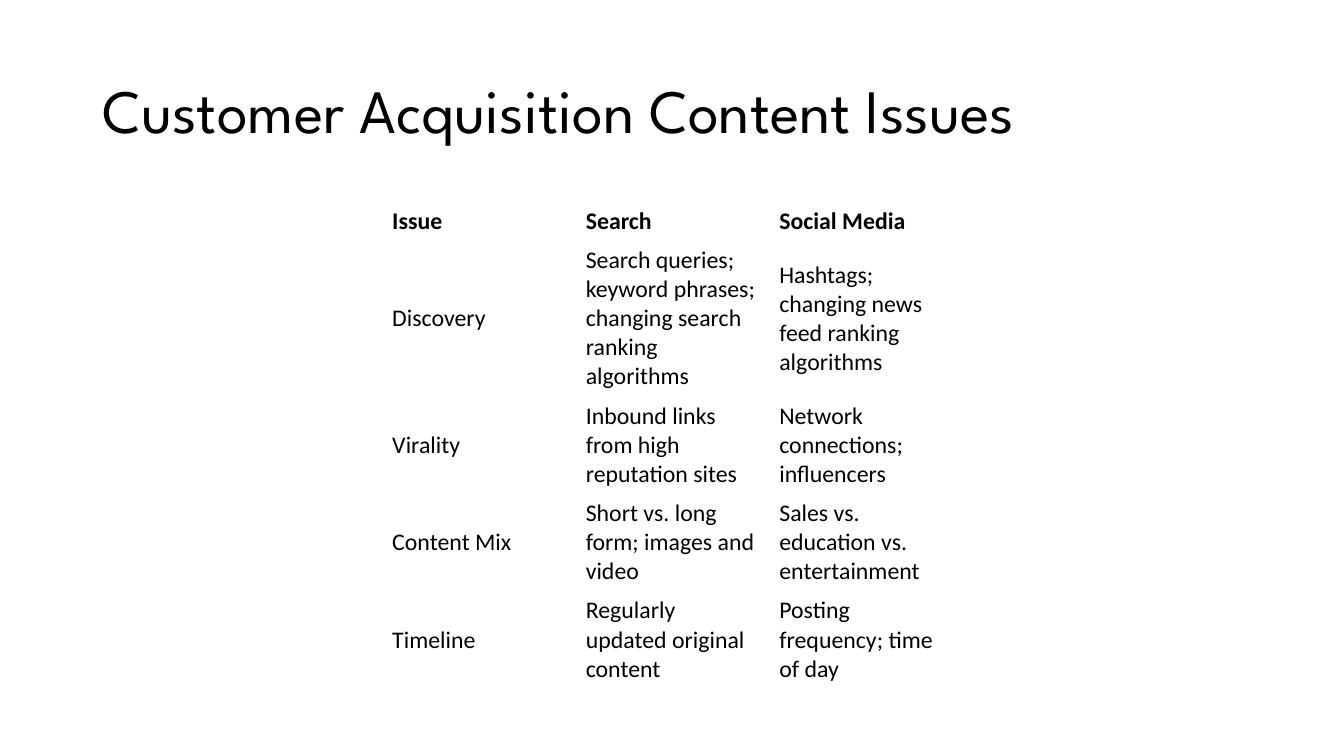
from dataclasses import dataclass

from pptx import Presentation
from pptx import util as u
from pptx.dml import color
from pptx.enum import text


@dataclass(frozen=True)
class Theme:
    ink: color.RGBColor = color.RGBColor(0, 0, 0)
    title_font: str = "League Spartan"
    body_font: str = "Calibri"
    title_size: int = 44
    body_size: int = 17


THEME = Theme()
TITLE = "Customer Acquisition Content Issues"
ISSUES = [
    ("Issue", "Search", "Social Media"),
    ("Discovery",
     "Search queries; keyword phrases; changing search ranking algorithms",
     "Hashtags; changing news feed ranking algorithms"),
    ("Virality", "Inbound links from high reputation sites",
     "Network connections; influencers"),
    ("Content Mix", "Short vs. long form; images and video",
     "Sales vs. education vs. entertainment"),
    ("Timeline", "Regularly updated original content",
     "Posting frequency; time of day"),
]
ROW_HEIGHTS = [0.38, 1.52, 0.95, 0.95, 0.95]
COLUMN_WIDTH = 1.92


def format_text(frame, font_name, size, bold=False):
    for paragraph in frame.paragraphs:
        paragraph.alignment = text.PP_ALIGN.LEFT
        for run in paragraph.runs:
            run.font.name = font_name
            run.font.size = u.Pt(size)
            run.font.bold = bold
            run.font.color.rgb = THEME.ink


def set_title(slide, wording):
    title = slide.shapes.title
    title.left, title.top = u.Inches(0.92), u.Inches(0.4)
    title.width, title.height = u.Inches(11.5), u.Inches(1.45)
    frame = title.text_frame
    frame.text = wording
    frame.word_wrap = True
    frame.auto_size = text.MSO_AUTO_SIZE.NONE
    frame.vertical_anchor = text.MSO_ANCHOR.MIDDLE
    frame.paragraphs[0].line_spacing = 0.9
    format_text(frame, THEME.title_font, THEME.title_size)


def fill_cell(cell, wording, is_header):
    cell.fill.background()
    cell.vertical_anchor = text.MSO_ANCHOR.MIDDLE
    cell.margin_left = cell.margin_right = u.Inches(0.1)
    cell.margin_top = cell.margin_bottom = u.Inches(0.05)
    cell.text_frame.text = wording
    format_text(cell.text_frame, THEME.body_font, THEME.body_size, is_header)


def add_issue_table(slide, issues):
    column_count = len(issues[0])
    table = slide.shapes.add_table(
        len(issues), column_count, u.Inches(3.79), u.Inches(2),
        u.Inches(COLUMN_WIDTH * column_count), u.Inches(sum(ROW_HEIGHTS)),
    ).table
    table.horz_banding = False
    for column in table.columns:
        column.width = u.Inches(COLUMN_WIDTH)
    for row_index, (row, height, issue) in enumerate(
            zip(table.rows, ROW_HEIGHTS, issues)):
        row.height = u.Inches(height)
        for cell, wording in zip(row.cells, issue):
            fill_cell(cell, wording, is_header=row_index == 0)


def main():
    deck = Presentation()
    deck.slide_width, deck.slide_height = u.Inches(13.33), u.Inches(7.5)
    slide = deck.slides.add_slide(deck.slide_layouts.get_by_name("Title Only"))
    set_title(slide, TITLE)
    add_issue_table(slide, ISSUES)
    deck.save("out.pptx")


if __name__ == "__main__":
    main()
